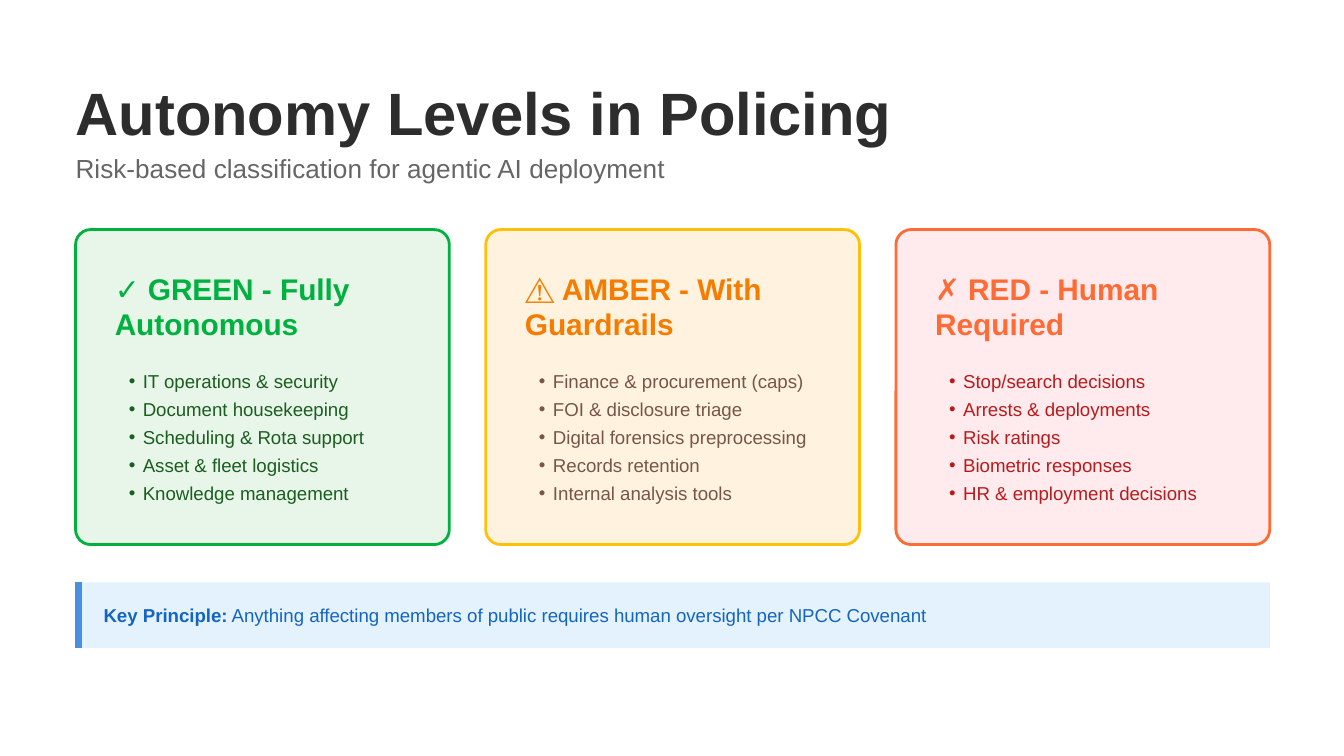
from lxml import etree
from pptx import Presentation
from pptx.dml.color import RGBColor
from pptx.enum.shapes import MSO_CONNECTOR, MSO_SHAPE
from pptx.enum.text import MSO_ANCHOR, MSO_AUTO_SIZE, PP_ALIGN
from pptx.oxml.ns import qn
from pptx.util import Pt

PX = 9525  # EMU per px, 96 px to the inch
FONT = "Arial"
LEFT = PP_ALIGN.LEFT
TOP = MSO_ANCHOR.TOP
NO_FIT = MSO_AUTO_SIZE.NONE
ROUNDED = MSO_SHAPE.ROUNDED_RECTANGLE
RECTANGLE = MSO_SHAPE.RECTANGLE
STRAIGHT = MSO_CONNECTOR.STRAIGHT
TITLE_ONLY = 5

COLORS = {
    "title": "2D2D2D", "subtitle": "666666",
    "green_fill": "E8F5E9", "green_accent": "00B140",
    "green_line": "00B140", "green_text": "1B5E20",
    "amber_fill": "FFF3E0", "amber_accent": "F57C00",
    "amber_line": "FFC107", "amber_text": "795548",
    "red_fill": "FFEBEE", "red_accent": "FF6B35",
    "red_line": "FF6B35", "red_text": "B71C1C",
    "note_fill": "E3F2FD", "note_bar": "4A90E2", "note_text": "1565C0",
}

LEVELS = [
    ("green", "✓ GREEN - Fully Autonomous", [
        "IT operations & security", "Document housekeeping",
        "Scheduling & Rota support", "Asset & fleet logistics",
        "Knowledge management"]),
    ("amber", "⚠ AMBER - With Guardrails", [
        "Finance & procurement (caps)", "FOI & disclosure triage",
        "Digital forensics preprocessing", "Records retention",
        "Internal analysis tools"]),
    ("red", "✗ RED - Human Required", [
        "Stop/search decisions", "Arrests & deployments", "Risk ratings",
        "Biometric responses", "HR & employment decisions"]),
]


def emu(*lengths):
    return [n * PX for n in lengths]


def rgb(name):
    return RGBColor.from_string(COLORS[name])


def format_frame(tf, inset=0):
    tf.margin_left = inset * PX
    tf.margin_top = tf.margin_right = tf.margin_bottom = 0
    tf.word_wrap = True
    tf.auto_size = NO_FIT
    tf.vertical_anchor = TOP


def add_text(s, box, inset=0):
    tf = s.shapes.add_textbox(*emu(*box)).text_frame
    format_frame(tf, inset)
    return tf


def add_run(p, text, size, color, bold=False):
    p.alignment = LEFT
    r = p.add_run()
    r.text = text
    r.font.name = FONT
    r.font.size = Pt(size)
    r.font.bold = bold
    r.font.color.rgb = rgb(color)


def add_panel(s, kind, box, fill, line=None):
    sp = s.shapes.add_shape(kind, *emu(*box))
    sp.shadow.inherit = False
    sp.fill.solid()
    sp.fill.fore_color.rgb = rgb(fill)
    if line:
        sp.line.color.rgb = rgb(line)
        sp.line.width = Pt(1.5)
    else:
        sp.line.fill.background()
    return sp


def add_bullet(p):
    pPr = p._p.get_or_add_pPr()
    pPr.set("marL", str(10 * PX))
    pPr.set("indent", str(-10 * PX))
    etree.SubElement(pPr, qn("a:buFont"), typeface=FONT)
    etree.SubElement(pPr, qn("a:buChar"), char="•")


def add_header(s, box):
    x, y, w, h = box
    title = s.shapes.title
    title.left, title.top, title.width, title.height = emu(x, y, w, 49)
    format_frame(title.text_frame)
    add_run(title.text_frame.paragraphs[0], "Autonomy Levels in Policing",
            32, "title", True)
    p = add_text(s, (x, y + 55, w, h - 55)).paragraphs[0]
    p.space_before = Pt(5)
    add_run(p, "Risk-based classification for agentic AI deployment",
            14, "subtitle")


def add_level_card(s, box, level, heading, items):
    x, y, w, h = box
    card = add_panel(s, ROUNDED, box, f"{level}_fill", f"{level}_line")
    card.adjustments[0] = 0.048
    p = add_text(s, (x + 28, y + 29, w - 54, 51)).paragraphs[0]
    p.space_after = Pt(12)
    add_run(p, heading, 16, f"{level}_accent", True)
    tf = add_text(s, (x + 28, y + 96, w - 58, h - 125), inset=10)
    for i, item in enumerate(items):
        p = tf.add_paragraph() if i else tf.paragraphs[0]
        p.line_spacing = Pt(15)
        add_bullet(p)
        add_run(p, item, 10, f"{level}_text")


def add_level_row(s, box, card_w):
    x, y, w, h = box
    pitch = (w - card_w) // (len(LEVELS) - 1)
    for i, (level, heading, items) in enumerate(LEVELS):
        add_level_card(s, (x + i * pitch, y, card_w, h), level, heading, items)


def add_key_principle(s, box):
    x, y, w, h = box
    add_panel(s, RECTANGLE, box, "note_fill")
    bar = s.shapes.add_connector(STRAIGHT, *emu(x + 2, y, x + 2, y + h))
    bar.line.color.rgb = rgb("note_bar")
    bar.line.width = Pt(3.75)
    etree.SubElement(bar._element.spPr, qn("a:effectLst"))
    p = add_text(s, (x + 20, y + 15, w - 21, 15)).paragraphs[0]
    add_run(p, "Key Principle:", 10, "note_text", True)
    add_run(p, " Anything affecting members of public requires human "
            "oversight per NPCC Covenant", 10, "note_text")


def main():
    prs = Presentation()
    prs.slide_width, prs.slide_height = emu(960, 540)
    s = prs.slides.add_slide(prs.slide_layouts[TITLE_ONLY])
    add_header(s, (54, 54, 871, 77))
    add_level_row(s, (54, 164, 853, 225), card_w=267)
    add_key_principle(s, (54, 416, 853, 47))
    prs.save("out.pptx")


if __name__ == "__main__":
    main()
